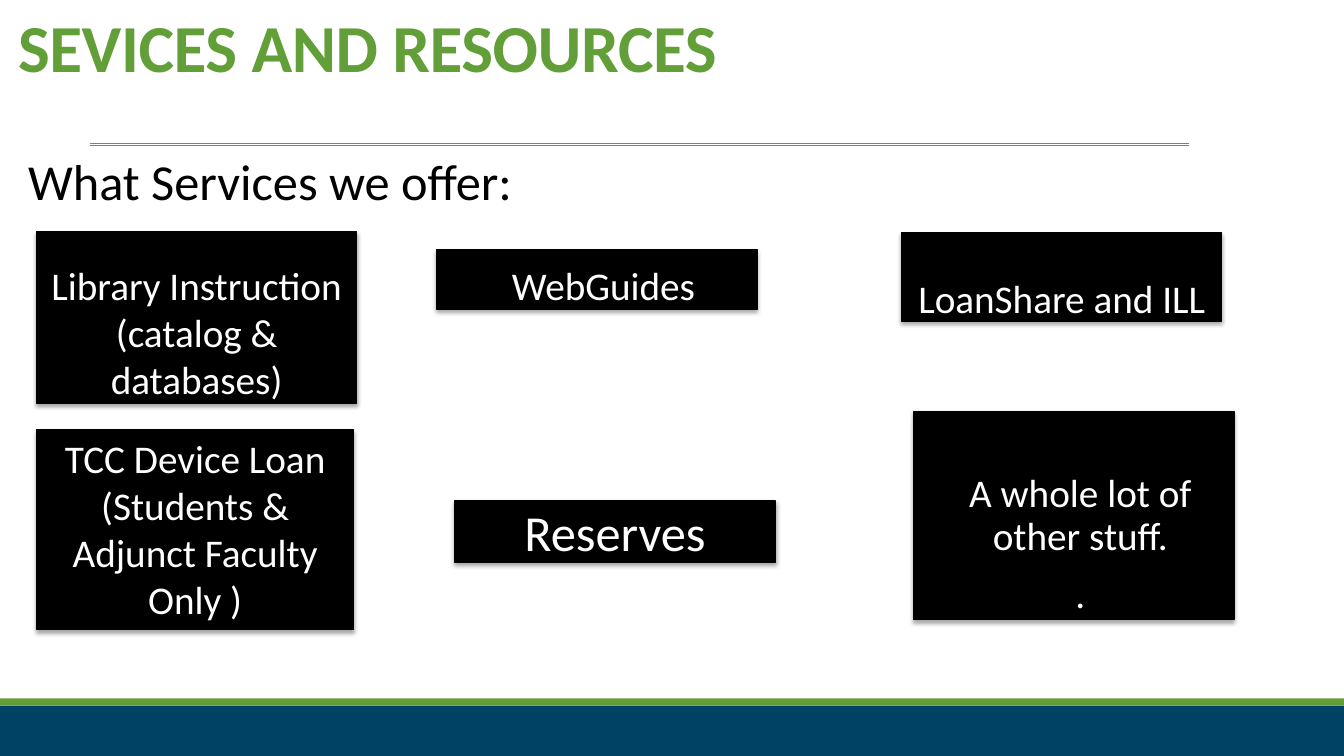
from lxml.etree import SubElement
from pptx import Presentation
from pptx.dml.color import RGBColor
from pptx.enum.shapes import MSO_CONNECTOR, MSO_SHAPE
from pptx.enum.text import MSO_ANCHOR, PP_ALIGN
from pptx.oxml.ns import qn
from pptx.util import Inches, Pt

BLACK = "000000"
WHITE = "FFFFFF"
GREEN = "639F38"
NAVY = "004264"
GREY = "7E7E7E"


def color(value):
    """Turn a hex string into a colour."""
    return RGBColor.from_string(value)


def add_block(slide, left, top, width, height, fill):
    """Draw a plain filled rectangle."""
    block = slide.shapes.add_shape(
        MSO_SHAPE.RECTANGLE, Inches(left), Inches(top), Inches(width), Inches(height))
    block.shadow.inherit = False
    block.fill.solid()
    block.fill.fore_color.rgb = color(fill)
    block.line.fill.background()
    return block


def add_rule(slide, left, top, width):
    """Draw a thin horizontal rule."""
    rule = slide.shapes.add_connector(
        MSO_CONNECTOR.STRAIGHT, Inches(left), Inches(top), Inches(left + width), Inches(top))
    rule.line.color.rgb = color(GREY)
    rule.line.width = Pt(0.5)
    SubElement(rule._element.spPr, qn("a:effectLst"))


def add_shadow(shape):
    """Give a shape a soft shadow below it."""
    effects = shape._element.spPr.find(qn("a:effectLst"))
    shadow = SubElement(effects, qn("a:outerShdw"), blurRad=str(Pt(3.1)),
                        dist=str(Pt(1.8)), dir="5400000", rotWithShape="0")
    shade = SubElement(shadow, qn("a:srgbClr"), val=BLACK)
    SubElement(shade, qn("a:alpha"), val="35000")


def set_margins(frame, left, top, right, bottom):
    """Set the insets of a text frame and anchor its text at the top."""
    frame.margin_left, frame.margin_top = Inches(left), Inches(top)
    frame.margin_right, frame.margin_bottom = Inches(right), Inches(bottom)
    frame.vertical_anchor = MSO_ANCHOR.TOP


def add_run(paragraph, text, size, font_color, bold=False, spacing=0):
    """Add a run of text, with letter spacing in points."""
    run = paragraph.add_run()
    run.text = text
    run.font.name = "Calibri"
    run.font.size = Pt(size)
    run.font.bold = bold
    run.font.color.rgb = color(font_color)
    if spacing:
        run._r.get_or_add_rPr().set("spc", str(round(spacing * 100)))


def add_text_box(slide, left, top, width, height, wrap):
    """Add an empty text box and return its frame."""
    box = slide.shapes.add_textbox(Inches(left), Inches(top), Inches(width), Inches(height))
    box.text_frame.word_wrap = wrap
    return box.text_frame


def add_service(slide, left, top, width, height, lines, margins=(0, 0, 0, 0),
                size=28, indent=0, line_spacing=1.0, space_before=0):
    """Add a black service card with centred white text."""
    card = add_block(slide, left, top, width, height, BLACK)
    card.line.color.rgb = color(BLACK)
    card.line.width = Pt(0.75)
    add_shadow(card)
    frame = card.text_frame
    frame.word_wrap = True
    set_margins(frame, *margins)
    for index, text in enumerate(lines):
        paragraph = frame.add_paragraph() if index else frame.paragraphs[0]
        paragraph.alignment = PP_ALIGN.CENTER
        paragraph.line_spacing = line_spacing
        if index:
            paragraph.space_before = Pt(space_before)
        if indent:
            paragraph._p.get_or_add_pPr().set("marL", str(Inches(indent)))
        add_run(paragraph, text, size, WHITE)


def add_title(slide, text):
    """Add the slide title."""
    frame = add_text_box(slide, 0.17, 0.1, 10.76, 0.76, True)
    set_margins(frame, 0.01, 0.01, 0, 0)
    frame.paragraphs[0].line_spacing = Pt(53.3)
    add_run(frame.paragraphs[0], text, 48, GREEN, bold=True, spacing=-0.3)


def main():
    """Build the services slide and save it."""
    presentation = Presentation()
    presentation.slide_width = Inches(13.33)
    presentation.slide_height = Inches(7.5)
    slide = presentation.slides.add_slide(presentation.slide_layouts[6])

    add_block(slide, 0, 7, 13.33, 0.5, NAVY)
    add_block(slide, 0, 6.93, 13.33, 0.07, GREEN)
    for top in (1.42, 1.44):
        add_rule(slide, 0.89, top, 10.9)
    add_title(slide, "SEVICES AND RESOURCES")

    add_service(slide, 0.36, 2.3, 3.18, 1.7, ["Library Instruction (catalog & databases)"],
                margins=(0, 0.29, 0, 0))
    add_service(slide, 4.33, 2.48, 3.18, 0.59, ["WebGuides"],
                margins=(0, 0.16, 0, 0), indent=0.13, line_spacing=0.92)
    add_service(slide, 9.06, 4.08, 3.18, 2.07, ["A whole lot of other stuff.", "."],
                margins=(0, 0.62, 0, 0), indent=0.13, line_spacing=0.91, space_before=10.7)
    add_service(slide, 8.94, 2.31, 3.18, 0.88, ["LoanShare and ILL"],
                margins=(0, 0.41, 0, 0))
    add_service(slide, 4.51, 4.97, 3.18, 0.61, ["Reserves"], size=36)

    heading = add_text_box(slide, 0.18, 1.44, 5.08, 0.71, False)
    add_run(heading.paragraphs[0], "What Services we offer:", 36, BLACK)
    add_service(slide, 0.36, 4.26, 3.15, 1.99,
                ["TCC Device Loan (Students & Adjunct Faculty Only )"],
                margins=(0.1, 0.05, 0.1, 0.05))

    presentation.save("out.pptx")


if __name__ == "__main__":
    main()
